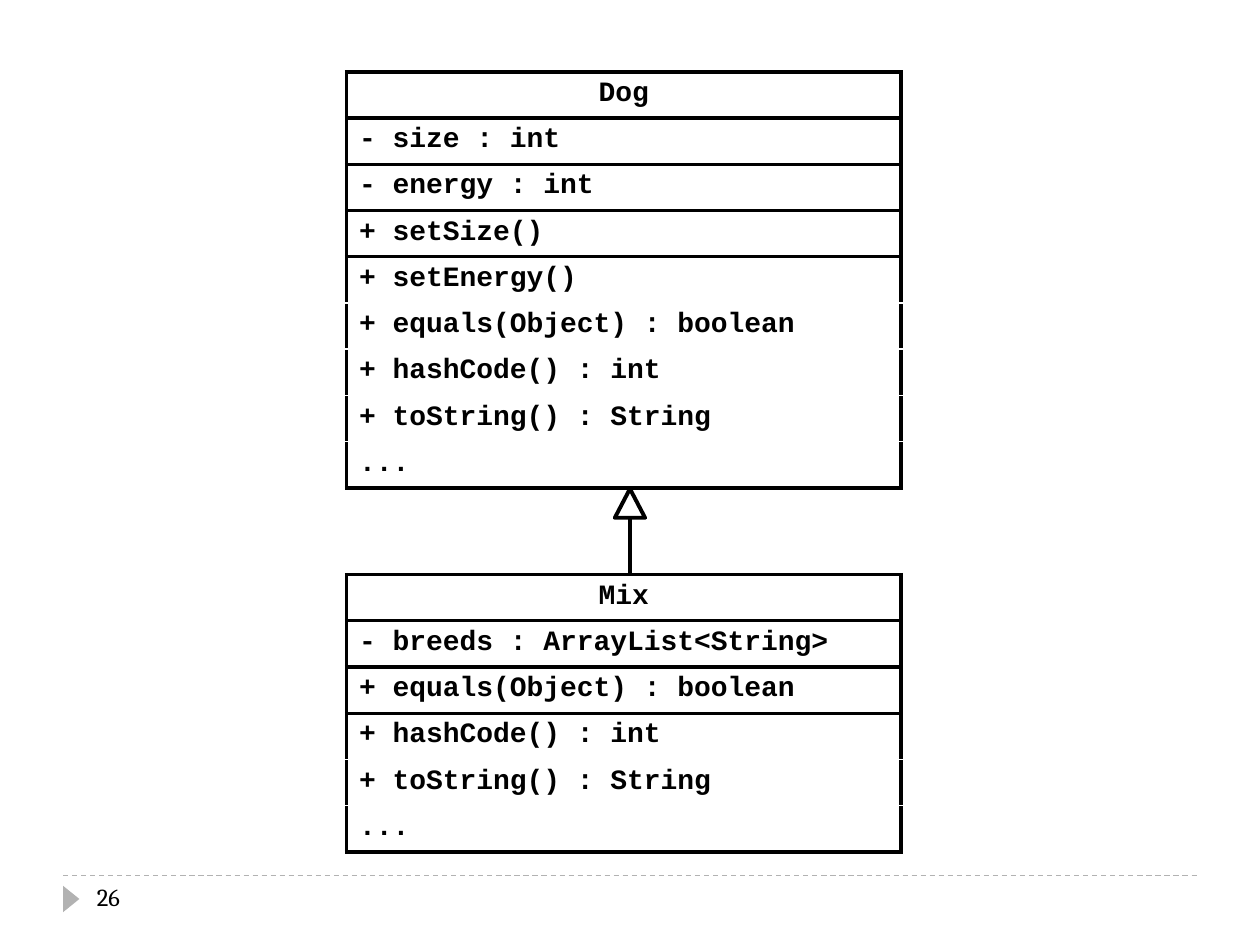
"""Build a UML slide in which class Mix inherits from class Dog."""
from lxml.etree import SubElement
from pptx import Presentation
from pptx.dml.color import RGBColor
from pptx.enum.dml import MSO_LINE
from pptx.enum.shapes import MSO_CONNECTOR, MSO_SHAPE
from pptx.enum.text import PP_ALIGN
from pptx.oxml import parse_xml
from pptx.oxml.ns import nsdecls, qn
from pptx.util import Inches, Pt

CLASSES = [
    {"top": 0.57, "sections": [
        ["Dog"],
        ["- size : int", "- energy : int"],
        ["+ setSize()", "+ setEnergy()", "+ equals(Object) : boolean",
         "+ hashCode() : int", "+ toString() : String", "..."],
    ]},
    {"top": 4.56, "sections": [
        ["Mix"],
        ["- breeds : ArrayList<String>"],
        ["+ equals(Object) : boolean", "+ hashCode() : int",
         "+ toString() : String", "..."],
    ]},
]
PAGE_NUMBER = "26"

THEME = {
    "ink": RGBColor(0, 0, 0),
    "paper": RGBColor(255, 255, 255),
    "rule": RGBColor(0xB2, 0xB2, 0xB2),
    "code": {"name": "Courier New", "size": Pt(16), "bold": True},
    "number": {"name": "Cambria", "size": Pt(14), "bold": False},
    "stroke": Pt(2.25),
    "hairline": Pt(0.75),
}
SLIDE_WIDTH, SLIDE_HEIGHT = 10, 7.5
TABLE_LEFT, TABLE_WIDTH, ROW_HEIGHT = 2.75, 4.4, 0.35
AXIS = SLIDE_WIDTH / 2
ARROW_TOP, ARROW_WIDTH, ARROW_HEIGHT = 3.88, 0.24, 0.23
MARGIN, FOOTER_TOP = 0.5, 6.95


def write(text_frame, text, font_format, alignment=PP_ALIGN.LEFT):
    paragraph = text_frame.paragraphs[0]
    paragraph.alignment = alignment
    run = paragraph.add_run()
    run.text = text
    for name, value in font_format.items():
        setattr(run.font, name, value)
    run.font.color.rgb = THEME["ink"]


def add_borders(cell, sides):
    properties = cell._tc.get_or_add_tcPr()
    for index, side in enumerate(sides):
        properties.insert(index, parse_xml(
            f'<a:ln{side} {nsdecls("a")} w="{THEME["stroke"]}"><a:solidFill>'
            f'<a:srgbClr val="{THEME["ink"]}"/></a:solidFill></a:ln{side}>'))


def add_class(slide, top, sections):
    row_count = sum(map(len, sections))
    table = slide.shapes.add_table(
        row_count, 1, Inches(TABLE_LEFT), Inches(top),
        Inches(TABLE_WIDTH), Inches(ROW_HEIGHT * row_count)).table
    table.first_row = table.horz_banding = False
    cells = table.iter_cells()
    for section_index, section in enumerate(sections):
        alignment = PP_ALIGN.LEFT if section_index else PP_ALIGN.CENTER
        for index, text in enumerate(section):
            cell = next(cells)
            cell.fill.background()
            write(cell.text_frame, text, THEME["code"], alignment)
            top_side = "T" if index == 0 else ""
            bottom_side = "B" if index == len(section) - 1 else ""
            add_borders(cell, "LR" + top_side + bottom_side)


def add_line(slide, start, end, color, width):
    connector = slide.shapes.add_connector(
        MSO_CONNECTOR.STRAIGHT, *map(Inches, start + end))
    connector.line.color.rgb = color
    connector.line.width = width
    SubElement(connector._element.spPr, qn("a:effectLst"))
    return connector


def add_triangle(slide, box, fill):
    triangle = slide.shapes.add_shape(
        MSO_SHAPE.ISOSCELES_TRIANGLE, *map(Inches, box))
    triangle.shadow.inherit = False
    triangle.fill.solid()
    triangle.fill.fore_color.rgb = fill
    triangle.line.fill.background()
    return triangle


def add_footer(slide):
    rule = add_line(slide, (MARGIN, FOOTER_TOP),
                    (SLIDE_WIDTH - MARGIN, FOOTER_TOP),
                    THEME["rule"], THEME["hairline"])
    rule.line.dash_style = MSO_LINE.DASH
    marker = add_triangle(slide, (0.46, 7.07, 0.21, 0.13), THEME["rule"])
    marker.rotation = 90
    number = slide.shapes.add_textbox(
        *map(Inches, (0.67, FOOTER_TOP, 2.17, 0.4)))
    number.text_frame.word_wrap = True
    write(number.text_frame, PAGE_NUMBER, THEME["number"])


def add_inheritance(slide):
    add_line(slide, (AXIS, CLASSES[1]["top"]), (AXIS, ARROW_TOP),
             THEME["ink"], THEME["stroke"])
    head = add_triangle(
        slide, (AXIS - ARROW_WIDTH / 2, ARROW_TOP, ARROW_WIDTH, ARROW_HEIGHT),
        THEME["paper"])
    head.line.color.rgb = THEME["ink"]
    head.line.width = THEME["stroke"]


def main():
    presentation = Presentation()
    presentation.slide_width = Inches(SLIDE_WIDTH)
    presentation.slide_height = Inches(SLIDE_HEIGHT)
    slide = presentation.slides.add_slide(presentation.slide_layouts[6])
    add_footer(slide)
    for diagram in CLASSES:
        add_class(slide, **diagram)
    add_inheritance(slide)
    presentation.save("out.pptx")


if __name__ == "__main__":
    main()
